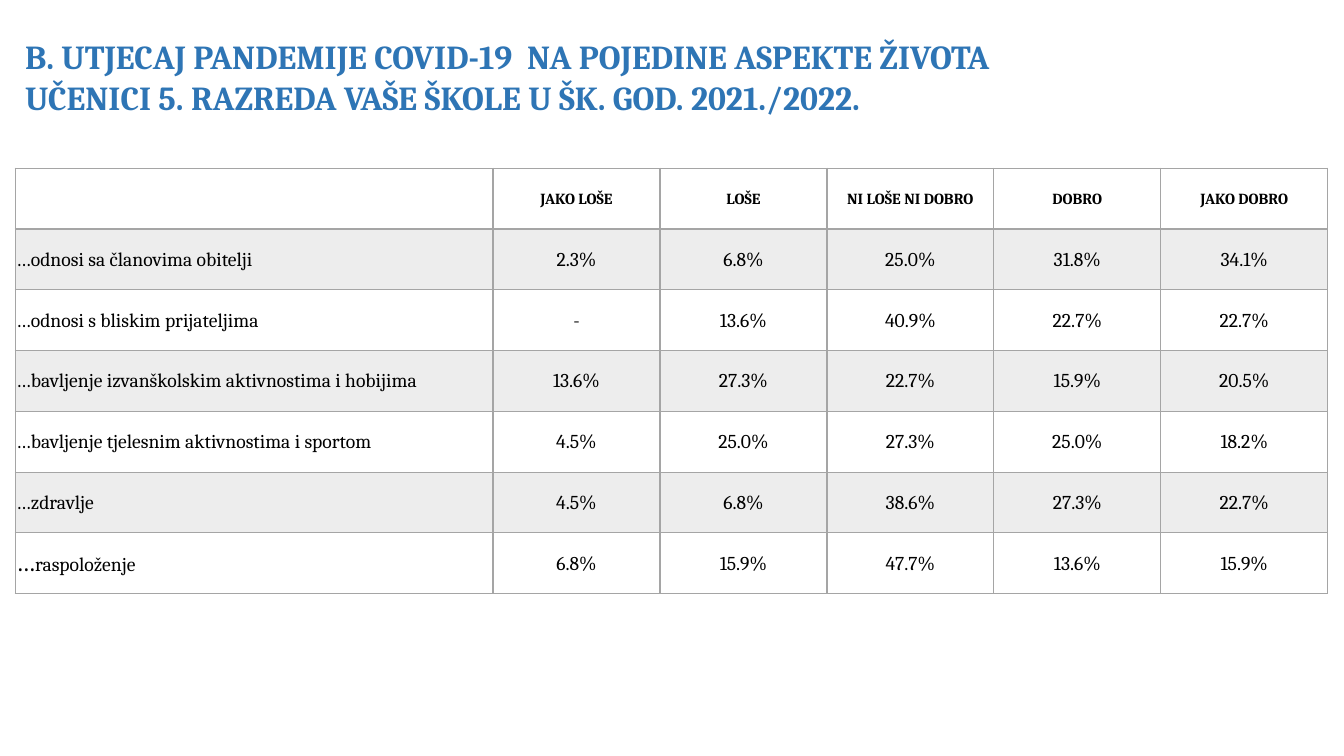
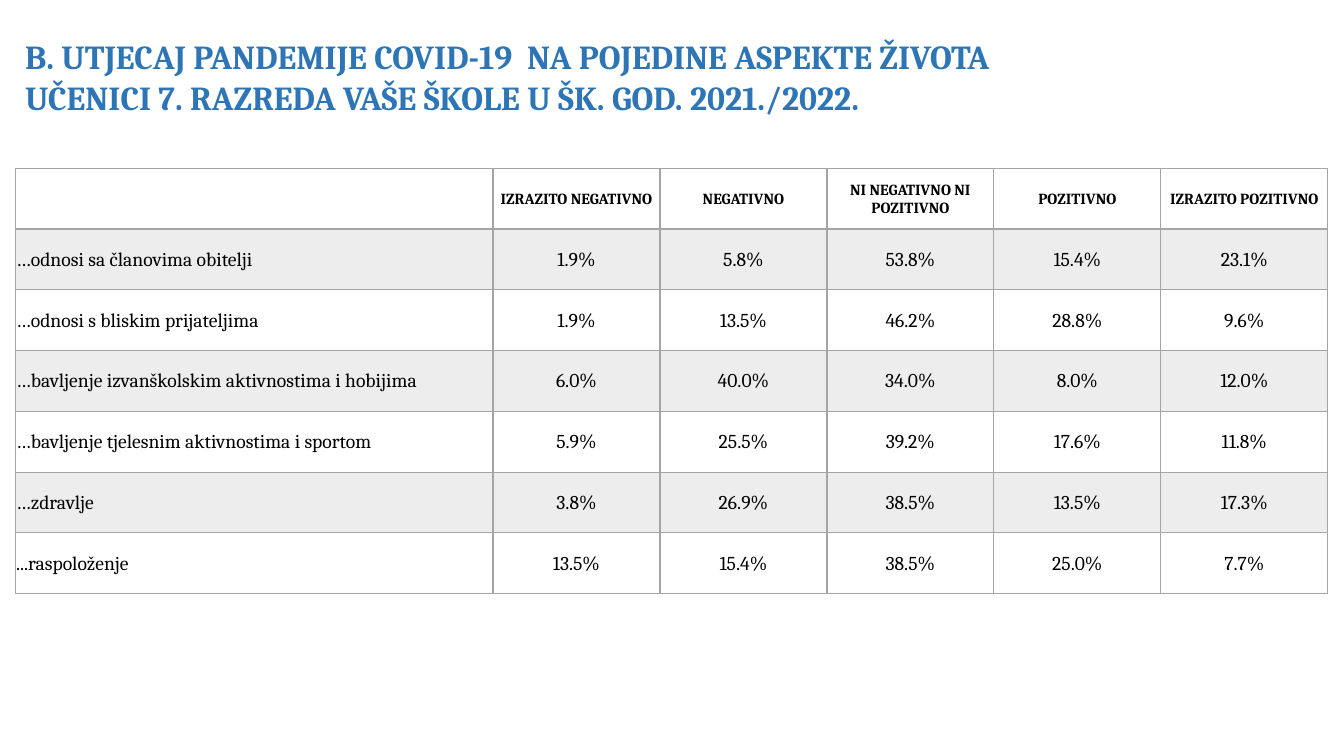
from lxml.etree import SubElement
from pptx import Presentation
from pptx.dml.color import RGBColor
from pptx.enum.text import MSO_ANCHOR, MSO_AUTO_SIZE, PP_ALIGN
from pptx.oxml.ns import qn
from pptx.util import Inches, Pt

FONT = "Cambria"
BLUE, BLACK, GRAY, BAND = "2E75B5", "000000", "A5A5A5", "EDEDED"
LEFT, TABLE_TOP, TABLE_WIDTH, TABLE_HEIGHT = 0.15, 1.67, 13.02, 4.22
LABEL_WIDTH = 4.74

ASPECTS = [
    "…odnosi sa članovima obitelji",
    "…odnosi s bliskim prijateljima",
    "…bavljenje izvanškolskim aktivnostima i hobijima",
    "…bavljenje tjelesnim aktivnostima i sportom",
    "…zdravlje",
]

# Grade, column headings, last row label, answers by aspect
SURVEYS = [
    (5, ["JAKO LOŠE", "LOŠE", "NI LOŠE NI DOBRO", "DOBRO", "JAKO DOBRO"],
     "…raspoloženje",
     [["2.3%", "6.8%", "25.0%", "31.8%", "34.1%"],
      ["-", "13.6%", "40.9%", "22.7%", "22.7%"],
      ["13.6%", "27.3%", "22.7%", "15.9%", "20.5%"],
      ["4.5%", "25.0%", "27.3%", "25.0%", "18.2%"],
      ["4.5%", "6.8%", "38.6%", "27.3%", "22.7%"],
      ["6.8%", "15.9%", "47.7%", "13.6%", "15.9%"]]),
    (7, ["IZRAZITO NEGATIVNO", "NEGATIVNO", "NI NEGATIVNO NI POZITIVNO",
         "POZITIVNO", "IZRAZITO POZITIVNO"],
     "...raspoloženje",
     [["1.9%", "5.8%", "53.8%", "15.4%", "23.1%"],
      ["1.9%", "13.5%", "46.2%", "28.8%", "9.6%"],
      ["6.0%", "40.0%", "34.0%", "8.0%", "12.0%"],
      ["5.9%", "25.5%", "39.2%", "17.6%", "11.8%"],
      ["3.8%", "26.9%", "38.5%", "13.5%", "17.3%"],
      ["13.5%", "15.4%", "38.5%", "25.0%", "7.7%"]]),
]


def style_font(font, size, color, bold):
    font.name, font.size, font.bold = FONT, Pt(size), bold
    font.color.rgb = RGBColor.from_string(color)


def add_borders(cell, top, bottom):
    properties = cell._tc.get_or_add_tcPr()
    for side, width in (("L", 1), ("R", 1), ("T", top), ("B", bottom)):
        line = SubElement(properties, qn(f"a:ln{side}"), w=str(Pt(width)))
        fill = SubElement(line, qn("a:solidFill"))
        SubElement(fill, qn("a:srgbClr"), val=GRAY)


deck = Presentation()
deck.slide_width, deck.slide_height = Inches(13.33), Inches(7.5)

for grade, headings, mood_label, answers in SURVEYS:
    page = deck.slides.add_slide(deck.slide_layouts[6])

    # Title
    box = page.shapes.add_textbox(Inches(LEFT), Inches(0.31), Inches(12.48), Inches(0.91))
    frame = box.text_frame
    frame.word_wrap = True
    frame.auto_size = MSO_AUTO_SIZE.SHAPE_TO_FIT_TEXT
    frame.text = ("B. UTJECAJ PANDEMIJE COVID-19  NA POJEDINE ASPEKTE ŽIVOTA\n"
                  f"UČENICI {grade}. RAZREDA VAŠE ŠKOLE U ŠK. GOD. 2021./2022.")
    for para in frame.paragraphs:
        style_font(para.font, 24, BLUE, True)

    # Table grid
    labels = ASPECTS + [mood_label]
    rows = [[""] + headings] + [[label] + shares for label, shares in zip(labels, answers)]
    table = page.shapes.add_table(len(rows), len(rows[0]), Inches(LEFT), Inches(TABLE_TOP),
                                  Inches(TABLE_WIDTH), Inches(TABLE_HEIGHT)).table
    table.first_row = table.horz_banding = False
    for index, column in enumerate(table.columns):
        share_width = (TABLE_WIDTH - LABEL_WIDTH) / len(headings)
        column.width = Inches(share_width if index else LABEL_WIDTH)

    # Table cells
    for row_index, row in enumerate(rows):
        is_header = row_index == 0
        for column_index, text in enumerate(row):
            cell = table.cell(row_index, column_index)
            cell.margin_left = cell.margin_right = cell.margin_top = Inches(0.01)
            cell.margin_bottom = 0
            cell.vertical_anchor = MSO_ANCHOR.MIDDLE
            add_borders(cell, 2 if row_index == 1 else 1, 2 if is_header else 1)
            if row_index % 2:
                cell.fill.solid()
                cell.fill.fore_color.rgb = RGBColor.from_string(BAND)
            else:
                cell.fill.background()
            para = cell.text_frame.paragraphs[0]
            para.alignment = PP_ALIGN.CENTER if column_index else PP_ALIGN.LEFT
            style_font(para.font, 11 if is_header else 14, BLACK, is_header)
            if text == "…raspoloženje":
                # Larger leading ellipsis
                span = para.add_run()
                span.text = text[0]
                span.font.size = Pt(18)
                text = text[1:]
            para.add_run().text = text

deck.save("out.pptx")
